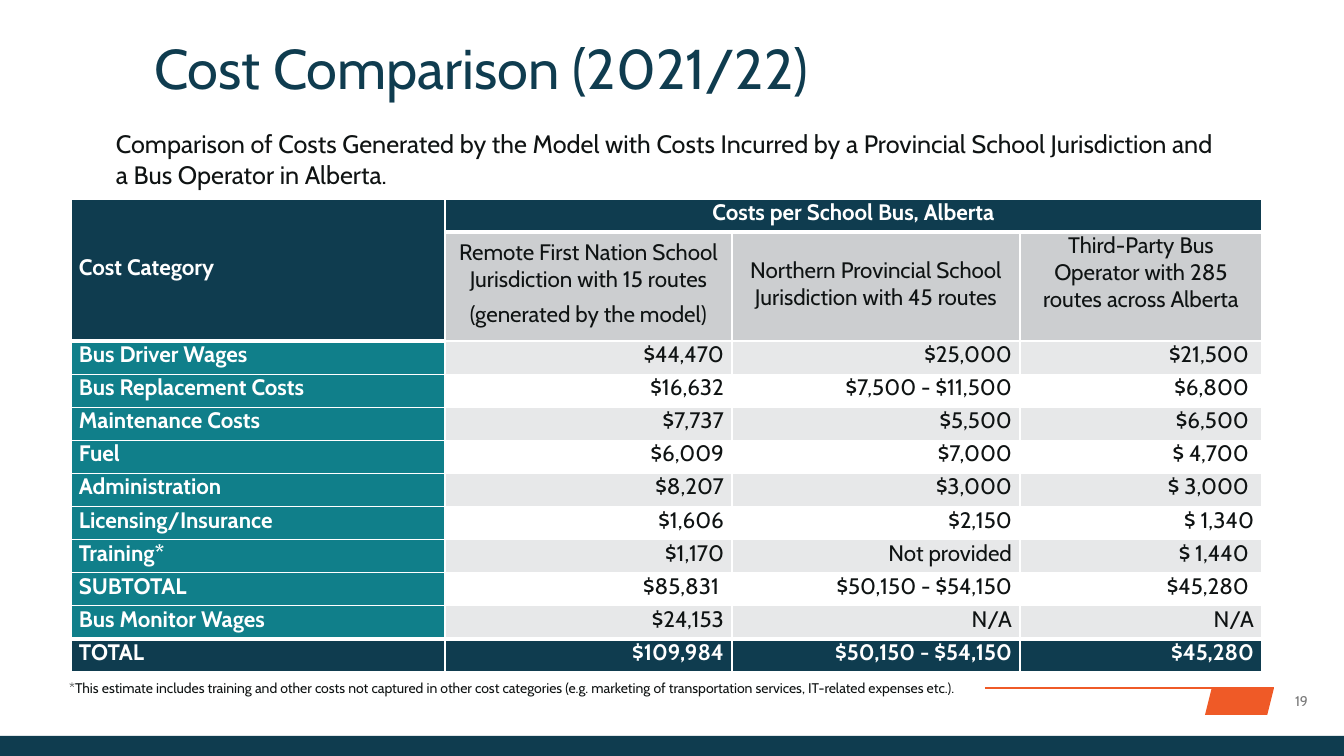
from dataclasses import dataclass

from lxml.etree import SubElement
from pptx import Presentation
from pptx.dml.color import RGBColor
from pptx.enum.shapes import MSO_CONNECTOR as Link, MSO_SHAPE as Shape
from pptx.enum.text import MSO_ANCHOR as Anchor, PP_ALIGN as Align
from pptx.oxml.ns import qn
from pptx.slide import Slide
from pptx.table import Table, _Cell as Cell
from pptx.text.text import TextFrame
from pptx.util import Emu, Pt

SCALE = 914400 / 100.8
FONT = "Cabin"
NAVY = RGBColor(0x0F, 0x3C, 0x4F)
TEAL = RGBColor(0x10, 0x7F, 0x8A)
ORANGE = RGBColor(0xEF, 0x5A, 0x27)
INK = RGBColor(0x0F, 0x13, 0x13)
GREY = RGBColor(0x79, 0x79, 0x79)
SILVER = RGBColor(0xCC, 0xCE, 0xD0)
PALE = RGBColor(0xE7, 0xE8, 0xE9)
WHITE = RGBColor(0xFF, 0xFF, 0xFF)

COLS = [374, 287, 288, 242]
ROWS = [33, 109] + [33] * 10
HEADS = [
    "Remote First Nation School Jurisdiction with 15 routes\n(generated by the model)",
    "Northern Provincial School Jurisdiction with 45 routes",
    "Third-Party Bus Operator with 285 routes across Alberta",
]
COSTS = [
    ("Bus Driver Wages", "$44,470", "$25,000", "$21,500 "),
    ("Bus Replacement Costs", "$16,632", "$7,500 - $11,500", "$6,800 "),
    ("Maintenance Costs", "$7,737", "$5,500", "$6,500 "),
    ("Fuel", "$6,009", "$7,000", "$ 4,700 "),
    ("Administration", "$8,207", "$3,000", "$ 3,000 "),
    ("Licensing/Insurance", "$1,606", "$2,150", "$ 1,340"),
    ("Training*", "$1,170", "Not provided", "$ 1,440 "),
    ("SUBTOTAL", "$85,831 ", "$50,150 - $54,150", "$45,280 "),
    ("Bus Monitor Wages", "$24,153", "N/A", "N/A"),
    ("TOTAL", "$109,984", "$50,150 - $54,150", "$45,280"),
]


@dataclass
class Box:
    x: int
    y: int
    w: int
    h: int


@dataclass
class Label:
    text: str
    box: Box
    size: int
    color: RGBColor = INK
    align: Align = Align.LEFT
    side: int = 10


@dataclass
class Block:
    kind: Shape
    box: Box
    fill: RGBColor


BLOCKS = [
    Block(Shape.PARALLELOGRAM, Box(1205, 688, 69, 27), ORANGE),
    Block(Shape.RECTANGLE, Box(0, 736, 1344, 20), NAVY),
]
LABELS = [
    Label("19", Box(1274, 687, 55, 27), 10, GREY, Align.CENTER, 0),
    Label("Comparison of Costs Generated by the Model with Costs Incurred by a "
          "Provincial School Jurisdiction and a Bus Operator in Alberta.",
          Box(106, 123, 1118, 72), 18),
    Label("*This estimate includes training and other costs not captured in other cost "
          "categories (e.g. marketing of transportation services, IT-related expenses etc.).",
          Box(59, 674, 977, 27), 10),
]


def px(n: int) -> Emu:
    return Emu(round(n * SCALE))


def spot(box: Box) -> list[Emu]:
    return [px(n) for n in (box.x, box.y, box.w, box.h)]


def write(frame: TextFrame, text: str, *, size: int, color: RGBColor = INK,
          bold: bool = False, align: Align = Align.LEFT, gap: int = 0,
          lead: float = 1.0) -> None:
    """Fill a frame with one paragraph per line; gap parts the paragraphs."""
    frame.text = text
    for i, para in enumerate(frame.paragraphs):
        para.alignment = align
        para.line_spacing = lead
        para.space_before = Pt(gap if i else 0)
        for run in para.runs:
            font = run.font
            font.name, font.size, font.bold = FONT, Pt(size), bold
            font.color.rgb = color


def inset(frame: TextFrame, side: int, edge: int) -> None:
    frame.margin_left = frame.margin_right = px(side)
    frame.margin_top = frame.margin_bottom = px(edge)


def add_block(slide: Slide, block: Block) -> None:
    shape = slide.shapes.add_shape(block.kind, *spot(block.box))
    shape.shadow.inherit = False
    shape.fill.solid()
    shape.fill.fore_color.rgb = block.fill
    shape.line.fill.background()


def add_label(slide: Slide, label: Label) -> None:
    frame = slide.shapes.add_textbox(*spot(label.box)).text_frame
    frame.word_wrap = True
    frame.vertical_anchor = Anchor.MIDDLE
    inset(frame, label.side, 5)
    write(frame, label.text, size=label.size, color=label.color, align=label.align)


def add_rule(slide: Slide) -> None:
    rule = slide.shapes.add_connector(Link.STRAIGHT, px(985), px(688), px(1274), px(688))
    rule.line.color.rgb = ORANGE
    rule.line.width = Pt(1)
    SubElement(rule._element.spPr, qn("a:effectLst"))


def edge(cell: Cell, top: int, base: int) -> None:
    """Draw white borders, with top and base widths in points."""
    props = cell._tc.get_or_add_tcPr()
    for tag, width in (("lnL", 1), ("lnR", 1), ("lnT", top), ("lnB", base)):
        line = SubElement(props, qn(f"a:{tag}"), w=str(Pt(width)))
        fill = SubElement(line, qn("a:solidFill"))
        SubElement(fill, qn("a:srgbClr"), val=str(WHITE))


def set_cell(table: Table, row: int, col: int, text: str, fill: RGBColor,
             align: Align) -> None:
    cell = table.cell(row, col)
    last = len(ROWS) - 1
    thick_top = row in (1, last) or (row, col) == (2, 0)
    thick_base = row in (0, last - 1) or (row, col) == (1, 0)
    edge(cell, 3 if thick_top else 1, 3 if thick_base else 1)
    cell.fill.solid()
    cell.fill.fore_color.rgb = fill
    cell.margin_left = cell.margin_right = px(8)
    cell.margin_top, cell.margin_bottom = 0, px(6)
    cell.vertical_anchor = Anchor.TOP if (row, col) == (1, 3) else Anchor.MIDDLE
    dark = fill in (NAVY, TEAL)
    write(cell.text_frame, text, size=16, color=WHITE if dark else INK, bold=dark,
          align=align, gap=6)


def add_costs(slide: Slide) -> None:
    box = Box(71, 199, sum(COLS), sum(ROWS))
    table = slide.shapes.add_table(len(ROWS), len(COLS), *spot(box)).table
    table.first_row = table.horz_banding = False
    for col, width in zip(table.columns, COLS):
        col.width = px(width)
    for row, height in zip(table.rows, ROWS):
        row.height = px(height)

    grid = [("Cost Category", "Costs per School Bus, Alberta", "", ""), ("", *HEADS), *COSTS]
    for r, texts in enumerate(grid):
        for c, text in enumerate(texts):
            if r == 0 or r == len(grid) - 1 or (r == 1 and c == 0):
                fill = NAVY
            elif r == 1:
                fill = SILVER
            elif c == 0:
                fill = TEAL
            else:
                fill = WHITE if r % 2 else PALE
            align = Align.LEFT if c == 0 else Align.CENTER if r < 2 else Align.RIGHT
            set_cell(table, r, c, text, fill, align)
    table.cell(0, 0).merge(table.cell(1, 0))
    table.cell(0, 1).merge(table.cell(0, 3))


def add_title(slide: Slide) -> None:
    title = slide.shapes.title
    title.left, title.top, title.width, title.height = spot(Box(154, 41, 1190, 61))
    frame = title.text_frame
    frame.vertical_anchor = Anchor.TOP
    inset(frame, 0, 0)
    write(frame, "Cost Comparison (2021/22)", size=40, color=NAVY, lead=0.9)


def main() -> None:
    deck = Presentation()
    deck.slide_width, deck.slide_height = px(1344), px(756)
    slide = deck.slides.add_slide(deck.slide_layouts[5])
    add_title(slide)
    for block in BLOCKS:
        add_block(slide, block)
    add_rule(slide)
    add_costs(slide)
    for label in LABELS:
        add_label(slide, label)
    deck.save("out.pptx")


if __name__ == "__main__":
    main()
